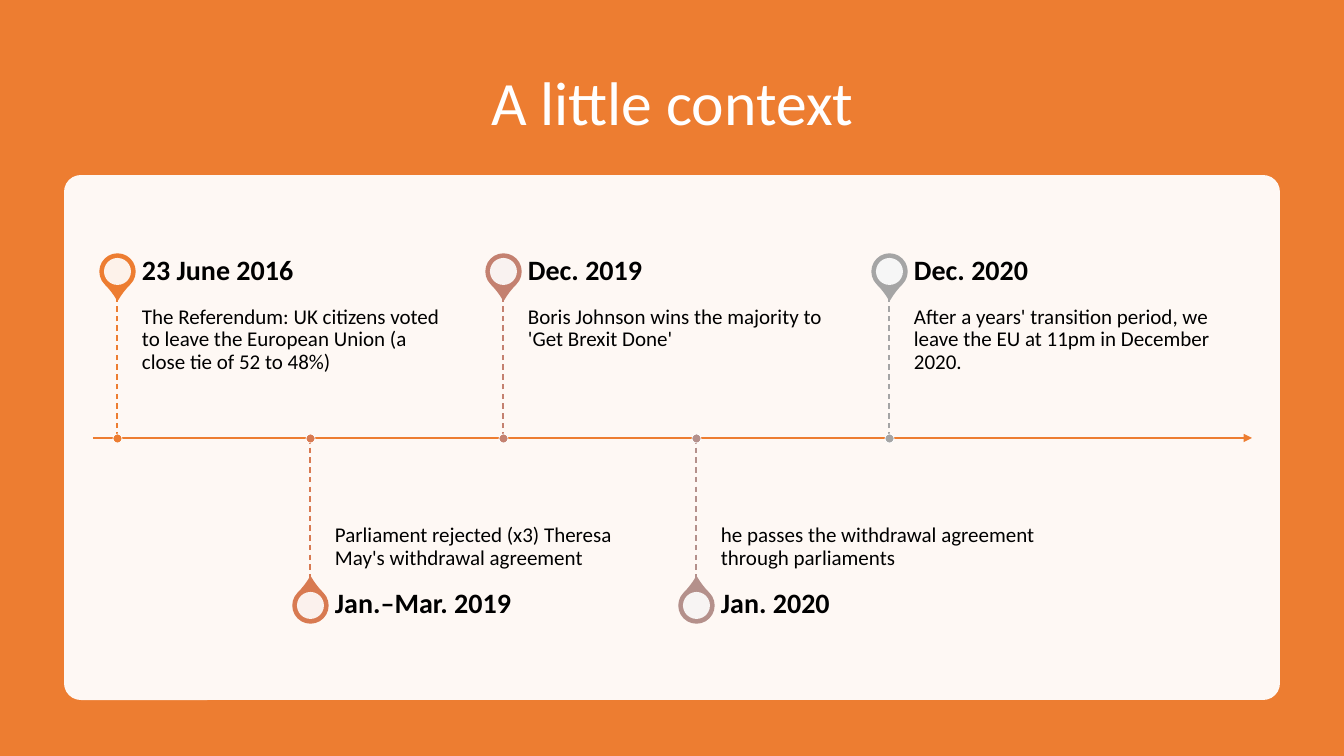
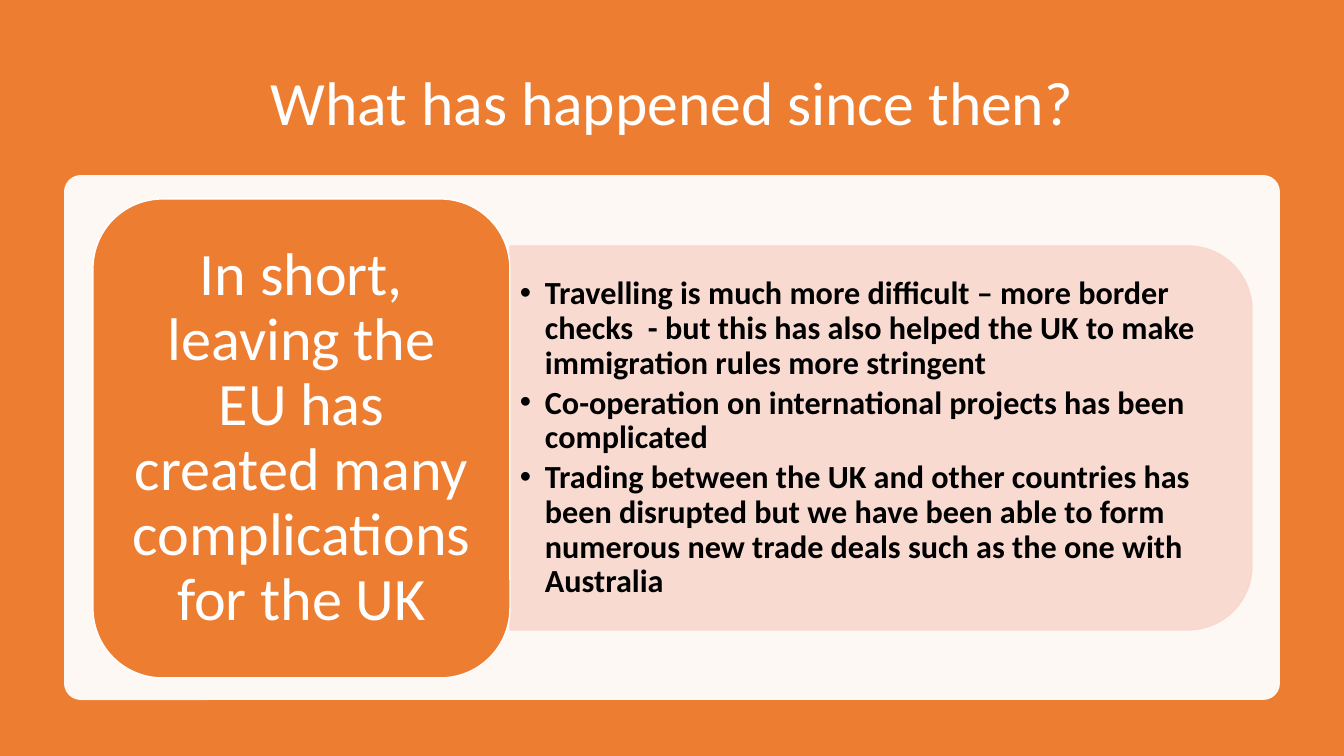
from lxml.etree import SubElement
from pptx import Presentation
from pptx.dml.color import RGBColor
from pptx.enum.dml import MSO_LINE
from pptx.enum.shapes import MSO_CONNECTOR, MSO_SHAPE
from pptx.enum.text import MSO_ANCHOR, PP_ALIGN
from pptx.oxml.ns import qn
from pptx.util import Emu, Pt

# Shared look
COLORS = {"orange": "ED7D31", "white": "FFFFFF", "black": "000000", "blush": "F8D7CE"}
FONT = "Calibri"
PAGE_SIZE = (1344, 756)
TITLE_BOX = (93, 50, 1159, 111)
PANEL_BOX = (64, 175, 1216, 525)
MIDDLE_Y = 438  # vertical centre of the panel
CONTENT_LEFT, CONTENT_RIGHT = 93, 1252

# Timeline geometry
FIRST_X, STEP_X = 117, 193
PIN_OFFSET, STEM_LENGTH = 167, 142
PIN_SIZE, HOLE_SIZE, DOT_SIZE = 35, 27, 9
LABEL_GAP, LABEL_WIDTH, DATE_HEIGHT = 25, 322, 49

EVENTS = [
    ("23 June 2016", "The Referendum: UK citizens voted to leave the European Union "
                     "(a close tie of 52 to 48%)", "ED7D31"),
    ("Jan.–Mar. 2019", "Parliament rejected (x3) Theresa May's withdrawal agreement", "D87A51"),
    ("Dec. 2019", "Boris Johnson wins the majority to 'Get Brexit Done'", "C48170"),
    ("Jan. 2020", "he passes the withdrawal agreement through parliaments", "B4908B"),
    ("Dec. 2020", "After a years' transition period, we leave the EU at 11pm "
                  "in December 2020.", "A5A5A5"),
]
SUMMARY = "In short, leaving the EU has created many complications for the UK"
EFFECTS = [
    "Travelling is much more difficult – more border checks  - but this has also "
    "helped the UK to make immigration rules more stringent",
    "Co-operation on international projects has been complicated",
    "Trading between the UK and other countries has been disrupted but we have been able "
    "to form numerous new trade deals such as the one with Australia",
]


def px(length):
    return Emu(round(length * 914400 / 100.8))


def rgb(color):
    return RGBColor.from_string(color)


def add_box(page, kind, bounds, fill, line=None, width=1, opacity=100, adjust=None):
    """Add a preset shape; opacity (percent) covers both fill and line."""
    box = page.shapes.add_shape(kind, *map(px, bounds))
    box.shadow.inherit = False
    box.fill.solid()
    box.fill.fore_color.rgb = rgb(fill)
    if line:
        box.line.color.rgb = rgb(line)
        box.line.width = Pt(width)
    else:
        box.line.fill.background()
    if adjust is not None:
        box.adjustments[0] = adjust
    if opacity < 100:
        for color in box._element.spPr.iter(qn("a:srgbClr")):
            SubElement(color, qn("a:alpha"), val=str(opacity * 1000))
    return box


def add_disc(page, x, y, size, fill, kind=MSO_SHAPE.OVAL, **style):
    """Add a shape of equal sides centred on a point."""
    return add_box(page, kind, (x - size // 2, y - size // 2, size, size), fill, **style)


def add_line(page, start, end, color, width):
    line = page.shapes.add_connector(MSO_CONNECTOR.STRAIGHT, *map(px, start + end))
    line.line.color.rgb = rgb(color)
    line.line.width = Pt(width)
    SubElement(line._element.spPr, qn("a:effectLst"))
    return line


def write(box, lines, size, color=COLORS["black"], bold=False, align=PP_ALIGN.LEFT,
          anchor=MSO_ANCHOR.MIDDLE, insets=(10, 5, 10, 5), bullets=False):
    """Fill a shape or text box with paragraphs; insets are left, top, right, bottom."""
    frame = box.text_frame
    frame.word_wrap = True
    frame.vertical_anchor = anchor
    frame.margin_left, frame.margin_top, frame.margin_right, frame.margin_bottom = map(px, insets)
    for index, line in enumerate(lines):
        para = frame.add_paragraph() if index else frame.paragraphs[0]
        para.text = line
        para.alignment = align
        para.line_spacing = 0.9
        para.font.name = FONT
        para.font.size = Pt(size)
        para.font.bold = bold
        para.font.color.rgb = rgb(color)
        if bullets:
            para.space_after = Pt(3.5)
            properties = para._p.get_or_add_pPr()
            properties.set("marL", str(px(25)))
            properties.set("indent", str(-px(25)))
            SubElement(properties, qn("a:buFont"), typeface="Arial")
            SubElement(properties, qn("a:buChar"), char="•")


def add_text(page, bounds, lines, size, **style):
    write(page.shapes.add_textbox(*map(px, bounds)), lines, size, **style)


def add_page(deck, title):
    """Start a page with the orange background, title and pale panel."""
    page = deck.slides.add_slide(deck.slide_layouts[6])
    page.background.fill.solid()
    page.background.fill.fore_color.rgb = rgb(COLORS["orange"])
    add_text(page, TITLE_BOX, [title], 44, color=COLORS["white"], align=PP_ALIGN.CENTER)
    add_box(page, MSO_SHAPE.ROUNDED_RECTANGLE, PANEL_BOX, COLORS["white"],
            opacity=95, adjust=0.032)
    return page


def add_event(page, x, above, date, story, color):
    """Add one pin with its stem, dot and labels on either side of the axis."""
    side = -1 if above else 1
    pin_y = MIDDLE_Y + side * PIN_OFFSET
    stem_end = MIDDLE_Y + side * STEM_LENGTH
    pin = add_disc(page, x, pin_y, PIN_SIZE, color, kind=MSO_SHAPE.TEAR, line=color, adjust=1.15)
    pin.rotation = 135 if above else 315
    add_disc(page, x, pin_y, HOLE_SIZE, COLORS["white"], opacity=90)

    left = x + LABEL_GAP
    add_text(page, (left, min(stem_end, MIDDLE_Y), LABEL_WIDTH, STEM_LENGTH), [story], 15,
             anchor=MSO_ANCHOR.TOP if above else MSO_ANCHOR.BOTTOM,
             insets=(0, 10, 10, 16) if above else (0, 16, 0, 10))
    date_top = stem_end - DATE_HEIGHT if above else stem_end
    add_text(page, (left, date_top, LABEL_WIDTH, DATE_HEIGHT), [date], 20,
             bold=True, insets=(0, 0, 14, 0))

    stem = add_line(page, (x, MIDDLE_Y), (x, stem_end), color, 1)
    stem.line.dash_style = MSO_LINE.DASH
    add_disc(page, x, MIDDLE_Y, DOT_SIZE, color, line=COLORS["white"], width=0.5)


def add_timeline_page(deck):
    page = add_page(deck, "A little context")
    axis = add_line(page, (CONTENT_LEFT, MIDDLE_Y), (CONTENT_RIGHT, MIDDLE_Y),
                    COLORS["orange"], 1.5)
    SubElement(axis.line._get_or_add_ln(), qn("a:tailEnd"), type="triangle")
    for index, event in enumerate(EVENTS):
        add_event(page, FIRST_X + index * STEP_X, index % 2 == 0, *event)


def add_effects_page(deck):
    page = add_page(deck, "What has happened since then?")
    # The bullet panel is turned so that its round corners face right
    left, length, height = 510, CONTENT_RIGHT - 510, 384
    upright = (left + (length - height) // 2, MIDDLE_Y - length // 2, height, length)
    panel = add_box(page, MSO_SHAPE.ROUND_2_SAME_RECTANGLE, upright, COLORS["blush"],
                    line=COLORS["blush"], opacity=90)
    panel.rotation = 90
    add_text(page, (left, 265, 723, 347), EFFECTS, 23, bold=True, bullets=True)
    # Summary card
    card = add_box(page, MSO_SHAPE.ROUNDED_RECTANGLE, (CONTENT_LEFT, 199, 417, 479),
                   COLORS["orange"], line=COLORS["white"])
    write(card, [SUMMARY], 43, color=COLORS["white"], align=PP_ALIGN.CENTER,
          insets=(18, 9, 18, 9))


def main():
    deck = Presentation()
    deck.slide_width, deck.slide_height = map(px, PAGE_SIZE)
    add_timeline_page(deck)
    add_effects_page(deck)
    deck.save("out.pptx")


if __name__ == "__main__":
    main()
